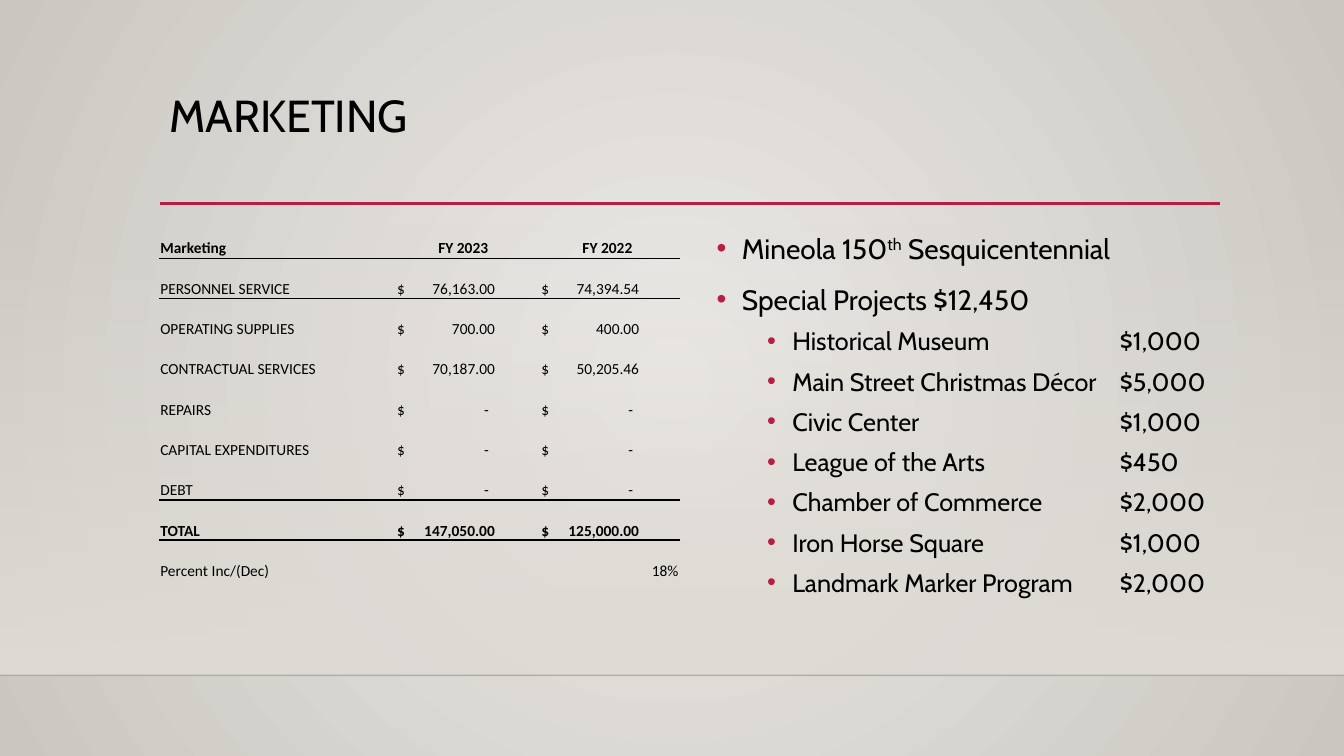
"""Build the Marketing budget slide."""
from dataclasses import dataclass

from lxml import etree
from pptx import Presentation
from pptx.dml.color import RGBColor
from pptx.enum.shapes import MSO_CONNECTOR, MSO_SHAPE
from pptx.enum.text import MSO_ANCHOR, PP_ALIGN
from pptx.oxml import parse_xml
from pptx.oxml.ns import qn
from pptx.util import Inches, Pt

STRAIGHT, RECTANGLE = MSO_CONNECTOR.STRAIGHT, MSO_SHAPE.RECTANGLE
TOP, BOTTOM = MSO_ANCHOR.TOP, MSO_ANCHOR.BOTTOM
LEFT, CENTER, RIGHT = PP_ALIGN.LEFT, PP_ALIGN.CENTER, PP_ALIGN.RIGHT

TITLE = "MARKETING"
HEADER = ("Marketing", "FY 2023", "FY 2022")
BUDGET = [
    ("PERSONNEL SERVICE", "76,163.00", "74,394.54"),
    ("OPERATING SUPPLIES", "700.00", "400.00"),
    ("CONTRACTUAL SERVICES", "70,187.00", "50,205.46"),
    ("REPAIRS", "-", "-"),
    ("CAPITAL EXPENDITURES", "-", "-"),
    ("DEBT", "-", "-"),
]
TOTAL = ("TOTAL", "147,050.00", "125,000.00")
CHANGE = ("Percent Inc/(Dec)", "", "18%")
HIGHLIGHTS = [("Mineola 150", "th", " Sesquicentennial"), ("Special Projects $12,450",)]
PROJECTS = [
    ("Historical Museum", "$1,000"),
    ("Main Street Christmas Décor", "$5,000"),
    ("Civic Center", "$1,000"),
    ("League of the Arts", "$450"),
    ("Chamber of Commerce", "$2,000"),
    ("Iron Horse Square", "$1,000"),
    ("Landmark Marker Program", "$2,000"),
]


@dataclass(frozen=True)
class Theme:
    """Colours, fonts and type sizes."""
    ink: str = "000000"
    accent: str = "B71E42"
    glow: str = "ECEAE7"
    edge: str = "CAC7C1"
    wall: str = "DFDBD5"
    font: str = "Cabin"
    table_font: str = "Calibri"
    title: int = 32
    highlight: int = 20
    project: int = 18
    cell: int = 11


THEME = Theme()
NO_GRID_STYLE = "{2D5ABB26-0587-4C30-8999-92F81FD0307C}"


def gradient(start, end, direction, start_alpha=100):
    """Return a two-stop gradient fill element."""
    stops = "".join(
        f'<a:gs pos="{place}"><a:srgbClr val="{color}"><a:alpha val="{alpha * 1000}"/></a:srgbClr></a:gs>'
        for place, color, alpha in ((0, start, start_alpha), (100000, end, 100)))
    return parse_xml(
        '<a:gradFill xmlns:a="http://schemas.openxmlformats.org/drawingml/2006/main" rotWithShape="1">'
        f"<a:gsLst>{stops}</a:gsLst>{direction}</a:gradFill>")


def style(paragraph, size, font=THEME.font, bold=False):
    """Format every run of a paragraph."""
    for run in paragraph.runs:
        run.font.size, run.font.name, run.font.bold = Pt(size), font, bold
        run.font.color.rgb = RGBColor.from_string(THEME.ink)


def add_tab(paragraph, position, align):
    """Add one tab stop to a paragraph."""
    tabs = etree.SubElement(paragraph._p.get_or_add_pPr(), qn("a:tabLst"))
    etree.SubElement(tabs, qn("a:tab"), pos=str(Inches(position)), algn=align)


def add_rule(slide, left, right, y, color, width, alpha=100):
    """Draw a horizontal rule without a shadow."""
    rule = slide.shapes.add_connector(STRAIGHT, Inches(left), Inches(y), Inches(right), Inches(y))
    rule.line.width = Pt(width)
    rule.line.color.rgb = RGBColor.from_string(color)
    color_node = rule.line._ln.find(".//" + qn("a:srgbClr"))
    etree.SubElement(color_node, qn("a:alpha"), val=str(alpha * 1000))
    etree.SubElement(rule._element.spPr, qn("a:effectLst"))


def add_backdrop(slide):
    """Paint the background, the wall and the two rules."""
    background = slide.background.fill
    background.solid()
    solid = slide._element.find(".//" + qn("p:bgPr")).find(qn("a:solidFill"))
    solid.getparent().replace(solid, gradient(
        THEME.glow, THEME.edge,
        '<a:path path="circle"><a:fillToRect l="50000" t="50000" r="50000" b="50000"/></a:path>'))
    wall = slide.shapes.add_shape(RECTANGLE, 0, Inches(2.21), Inches(13.33), Inches(4.49))
    wall.shadow.inherit = False
    wall.line.fill.background()
    wall.fill.solid()
    solid = wall._element.spPr.find(qn("a:solidFill"))
    solid.getparent().replace(solid, gradient(
        THEME.wall, THEME.wall, '<a:lin ang="5400000" scaled="0"/>', start_alpha=0))
    add_rule(slide, 0, 13.33, 6.7, THEME.ink, 1, alpha=20)
    add_rule(slide, 1.59, 12.1, 2.02, THEME.accent, 2.5)


def add_title(slide):
    """Place and format the title."""
    title = slide.shapes.title
    title.left, title.top, title.width, title.height = map(Inches, (1.58, 0.88, 10.5, 1.16))
    title.text_frame.text = TITLE
    title.text_frame.vertical_anchor = TOP
    heading = title.text_frame.paragraphs[0]
    heading.alignment, heading.line_spacing = LEFT, 0.9
    style(heading, THEME.title)


def add_border(cell, side, width):
    """Draw one cell border."""
    border = etree.Element(qn(f"a:{side}"), w=str(Pt(width)))
    fill = etree.SubElement(border, qn("a:solidFill"))
    etree.SubElement(fill, qn("a:srgbClr"), val=THEME.ink)
    cell._tc.get_or_add_tcPr().insert(0, border)


def add_budget(slide):
    """Build the budget table."""
    rows = [HEADER, *BUDGET, TOTAL, CHANGE]
    total_row = rows.index(TOTAL)
    rules = {0: 0.5, total_row - 1: 2}
    table = slide.shapes.add_table(
        len(rows), len(HEADER), Inches(1.58), Inches(2.21), Inches(5.16), Inches(3.55)).table
    table.first_row = table.horz_banding = False
    table._tbl.tblPr.find(qn("a:tableStyleId")).text = NO_GRID_STYLE
    for column, width in zip(table.columns, (2.3, 1.43, 1.43)):
        column.width = Inches(width)
    for r, row in enumerate(rows):
        table.rows[r].height = Inches(0.4 if r else 0.35)
        for c, entry in enumerate(row):
            cell = table.cell(r, c)
            is_amount = c > 0 and 0 < r <= total_row
            cell.margin_left = Inches(0.06 if is_amount else 0.01)
            cell.margin_right = cell.margin_top = Inches(0.01)
            cell.margin_bottom = 0
            cell.vertical_anchor = BOTTOM
            if r in rules:
                add_border(cell, "lnB", rules[r])
            if r - 1 in rules:
                add_border(cell, "lnT", rules[r - 1])
            cell.fill.background()
            line = cell.text_frame.paragraphs[0]
            if is_amount:
                add_tab(line, 0.91 if entry == "-" else 0.97, "r")
                entry = f"$\t{entry}"
            elif c:
                line.alignment = RIGHT if r else CENTER
            line.text = entry
            line.font.size = Pt(THEME.cell)
            style(line, THEME.cell, THEME.table_font, bold=row in (HEADER, TOTAL))


def add_bullet(paragraph, level):
    """Give a paragraph its indent and bullet."""
    properties = paragraph._p.get_or_add_pPr()
    properties.set("marL", str(Inches((0.25, 0.75)[level])))
    properties.set("indent", str(Inches(-0.25)))
    color = etree.SubElement(properties, qn("a:buClr"))
    etree.SubElement(color, qn("a:srgbClr"), val=THEME.accent)
    etree.SubElement(properties, qn("a:buFont"), typeface="Arial")
    etree.SubElement(properties, qn("a:buChar"), char="•")


def add_highlights(slide):
    """Write the highlights and the funded projects."""
    frame = slide.shapes.add_textbox(Inches(7.01), Inches(2.21), Inches(5.08), Inches(3.98)).text_frame
    frame.word_wrap = True
    entries = [(0, parts) for parts in HIGHLIGHTS] + [(1, ("\t".join(item),)) for item in PROJECTS]
    for index, (level, parts) in enumerate(entries):
        line = frame.add_paragraph() if index else frame.paragraphs[0]
        line.level, line.line_spacing = level, 1.1
        if index:
            line.space_before = Pt((10, 5)[level])
        add_bullet(line, level)
        if level:
            add_tab(line, 4, "l")
        for part in parts:
            run = line.add_run()
            run.text = part
            if part == "th":
                run.font._element.set("baseline", "30000")
        style(line, (THEME.highlight, THEME.project)[level])


def main():
    """Assemble and save the slide."""
    deck = Presentation()
    deck.slide_width, deck.slide_height = Inches(13.33), Inches(7.5)
    slide = deck.slides.add_slide(deck.slide_layouts[5])
    add_backdrop(slide)
    add_title(slide)
    add_budget(slide)
    add_highlights(slide)
    deck.save("out.pptx")


if __name__ == "__main__":
    main()
